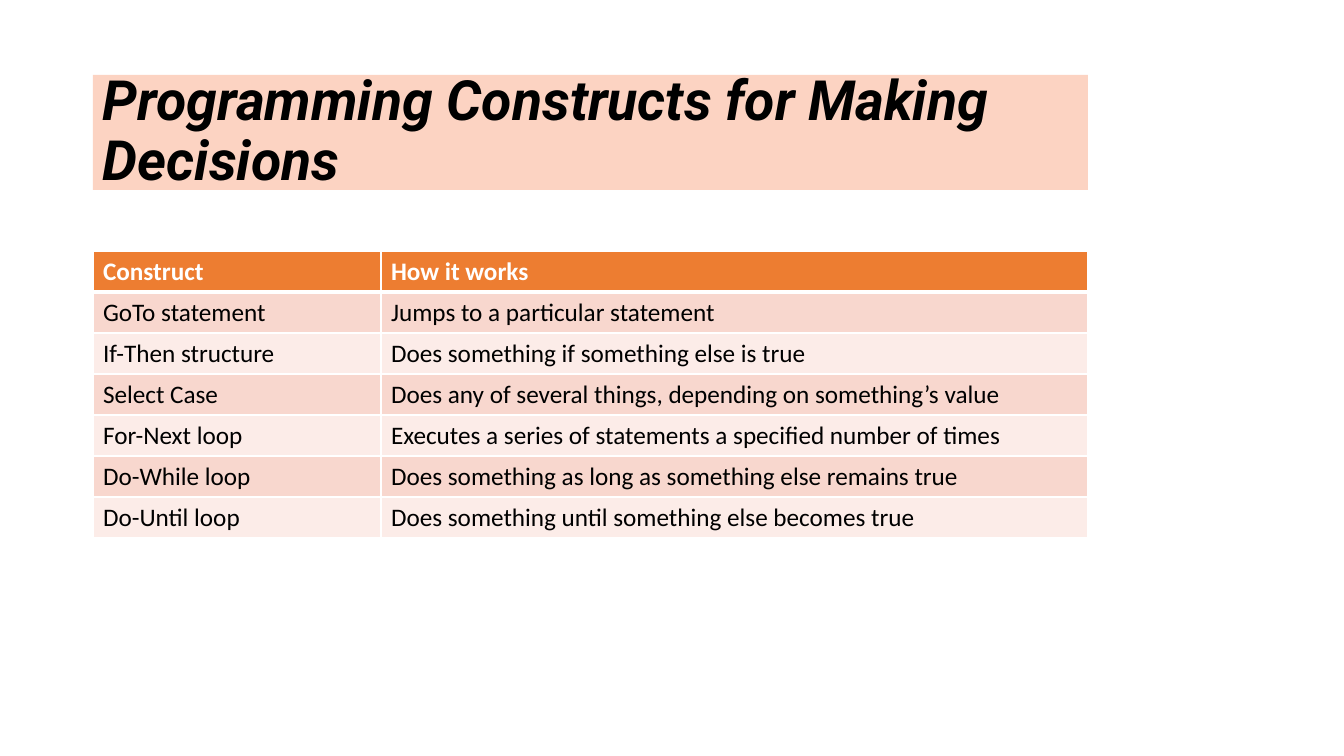
from lxml.etree import fromstring
from pptx import Presentation
from pptx.dml.color import RGBColor
from pptx.enum.shapes import MSO_SHAPE
from pptx.enum.text import MSO_ANCHOR, PP_ALIGN
from pptx.oxml.ns import nsdecls
from pptx.util import Emu, Pt

TITLE = "Programming Constructs for Making Decisions"
ROWS = [
    ("Construct", "How it works"),
    ("GoTo statement", "Jumps to a particular statement"),
    ("If-Then structure", "Does something if something else is true"),
    ("Select Case", "Does any of several things, depending on something’s value"),
    ("For-Next loop", "Executes a series of statements a specified number of times"),
    ("Do-While loop", "Does something as long as something else remains true"),
    ("Do-Until loop", "Does something until something else becomes true"),
]
COLS = (288, 707)
ROW = 41
LEFT, WIDTH = 93, sum(COLS)
HEAD, BANDS = "ED7D31", ("FCECE8", "F8D7CE")
TITLE_FONT = {"name": "Roboto", "size": Pt(39.6), "bold": True, "italic": True}
CELL_FONT = {"name": "Calibri", "size": Pt(18)}


def px(n):
    return Emu(round(n * 914400 / 100.8))


def rgb(code):
    return RGBColor.from_string(code)


def paint(part, code):
    part.fill.solid()
    part.fill.fore_color.rgb = rgb(code)


def style(font, code, form):
    for key, val in form.items():
        setattr(font, key, val)
    font.color.rgb = rgb(code)


def edge(cell, top, base):
    """Draw white borders, with the top and base widths in points."""
    sides = {"L": 1, "R": 1, "T": top, "B": base}
    for i, (side, width) in enumerate(sides.items()):
        line = fromstring(
            f'<a:ln{side} {nsdecls("a")} w="{Pt(width)}"><a:solidFill>'
            f'<a:srgbClr val="FFFFFF"/></a:solidFill></a:ln{side}>')
        cell._tc.get_or_add_tcPr().insert(i, line)


def add_title(slide):
    box = slide.shapes.add_shape(
        MSO_SHAPE.RECTANGLE, px(LEFT), px(75), px(WIDTH), px(115))
    box.shadow.inherit = False
    paint(box, "FCD3C2")
    box.line.fill.background()
    frame = box.text_frame
    frame.word_wrap = True
    frame.vertical_anchor = MSO_ANCHOR.MIDDLE
    para = frame.paragraphs[0]
    para.text = TITLE
    para.alignment = PP_ALIGN.LEFT
    para.line_spacing = 0.9
    style(para.runs[0].font, "000000", TITLE_FONT)


def add_grid(slide):
    grid = slide.shapes.add_table(
        len(ROWS), len(COLS), px(LEFT), px(251),
        px(WIDTH), px(ROW * len(ROWS))).table
    for col, width in zip(grid.columns, COLS):
        col.width = px(width)
    for r, texts in enumerate(ROWS):
        grid.rows[r].height = px(ROW)
        head = r == 0
        for c, text in enumerate(texts):
            cell = grid.cell(r, c)
            cell.text = text
            paint(cell, HEAD if head else BANDS[r % 2])
            edge(cell, 3 if r == 1 else 1, 3 if head else 1)
            style(cell.text_frame.paragraphs[0].runs[0].font,
                  "FFFFFF" if head else "000000",
                  CELL_FONT | {"bold": head})


def main():
    deck = Presentation()
    deck.slide_width, deck.slide_height = px(1344), px(756)
    slide = deck.slides.add_slide(deck.slide_layouts[6])
    add_title(slide)
    add_grid(slide)
    deck.save("out.pptx")


if __name__ == "__main__":
    main()
